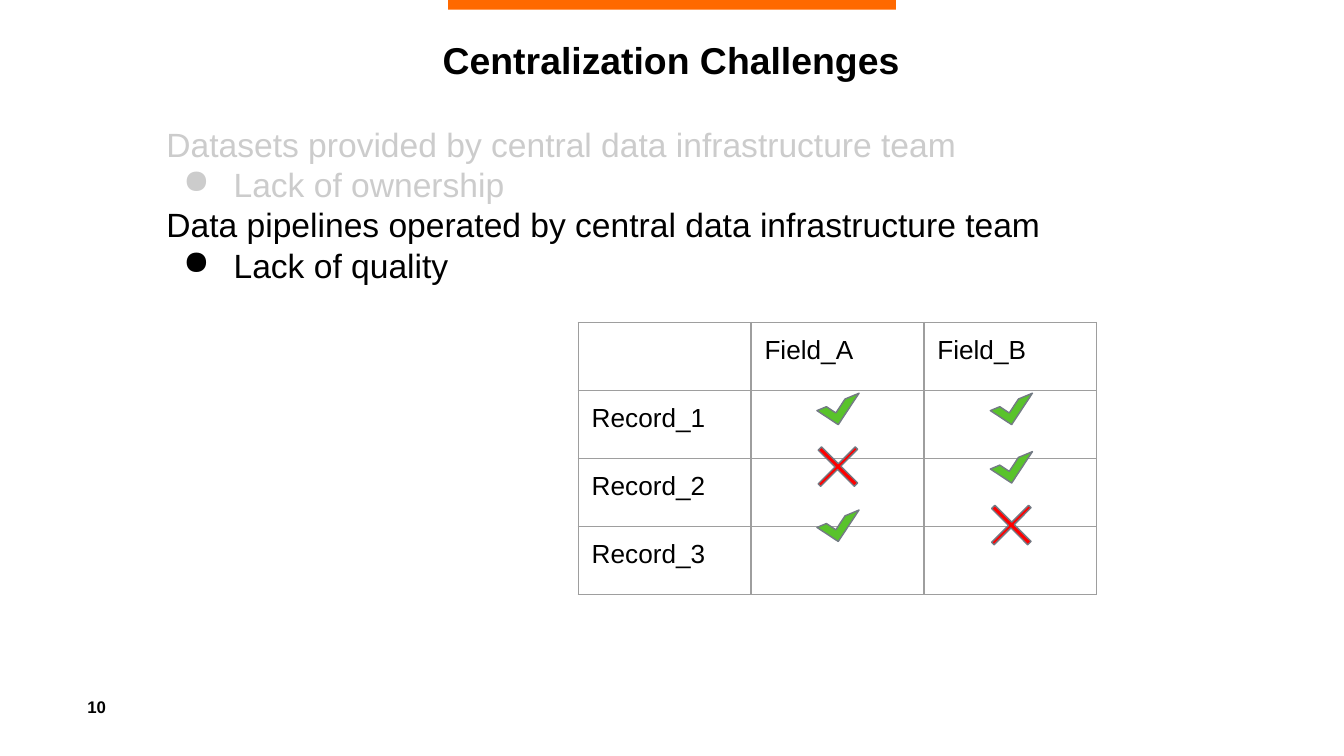
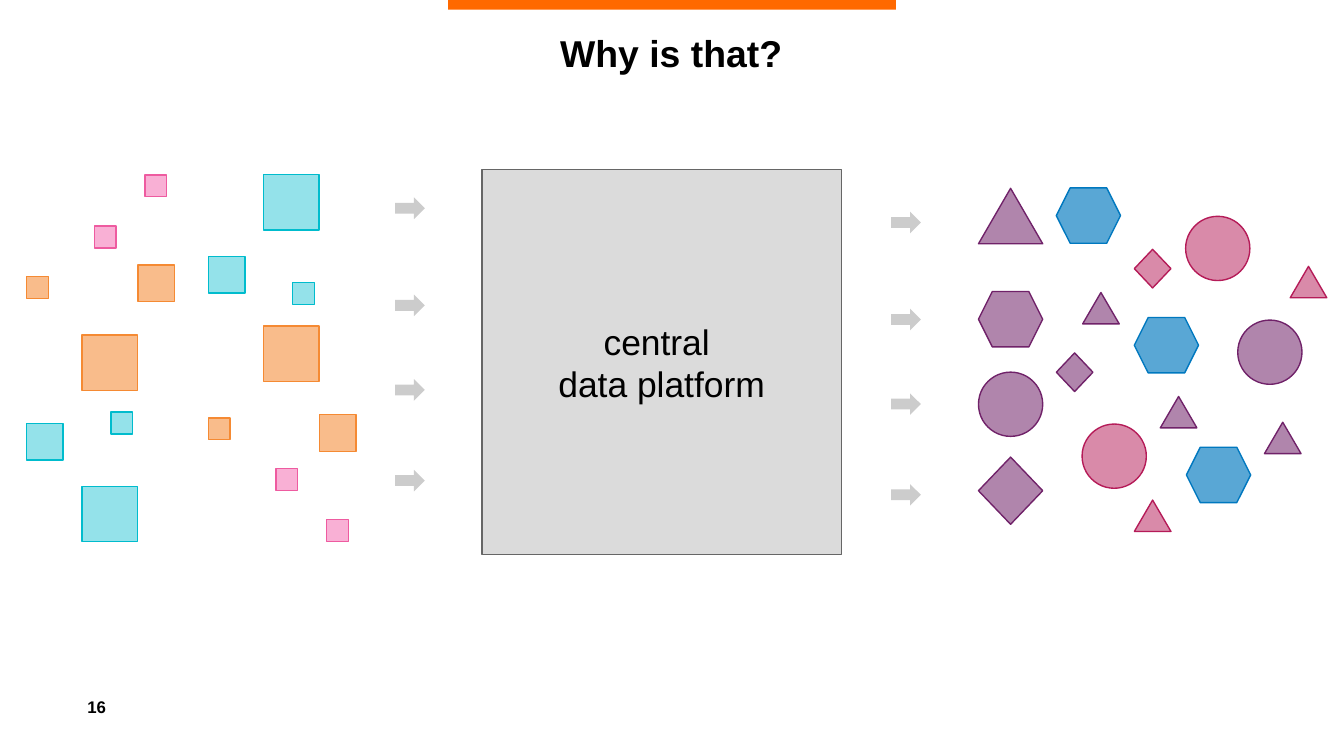
from lxml import etree
from pptx import Presentation
from pptx.dml.color import RGBColor
from pptx.enum import shapes, text
from pptx.oxml import ns
from pptx.util import Pt

BLACK, FADED, GRID, OUTLINE = "000000", "CCCCCC", "9E9E9E", "737A84"
ACCENT, GREEN, RED = "FF6900", "59C32B", "FF0000"
KIND = shapes.MSO_SHAPE
CENTER, MIDDLE = text.PP_ALIGN.CENTER, text.MSO_ANCHOR.MIDDLE

# fill, opacity in percent, outline
TEAL = ("00BCCD", 42, "00BCCD")
ORANGE = ("F58A33", 57, "F58A33")
PINK = ("F02B8F", 37, "EE5BA0")
PURPLE = ("702269", 55, "702269")
BLUE = ("0078BF", 65, "0078BF")
ROSE = ("B51B58", 51, "B51B58")


def rgb(value):
    return RGBColor.from_string(value)


def sub(parent, tag, **attrs):
    """Append an a: element with the given attributes."""
    el = etree.SubElement(parent, ns.qn("a:" + tag))
    for key, value in attrs.items():
        el.set(key, str(value))
    return el


def write(p, words, size=18, color=BLACK, bold=False, align=None, spacing=None, bullet=False):
    """Put formatted text in a paragraph; a vertical tab breaks the line."""
    if bullet:
        pPr = p._p.get_or_add_pPr()
        pPr.set("marL", str(Pt(36)))
        pPr.set("indent", str(Pt(-27)))
        sub(sub(pPr, "buClr"), "srgbClr", val=color)
        sub(pPr, "buChar", char="●")
    p.text = words
    if align is not None:
        p.alignment = align
    if spacing is not None:
        p.line_spacing = spacing
    for r in p.runs:
        r.font.name, r.font.size, r.font.bold = "Arial", Pt(size), bold
        r.font.color.rgb = rgb(color)


class Deck:
    def __init__(self):
        self.prs = Presentation()
        self.prs.slide_width, self.prs.slide_height = Pt(720), Pt(405)
        self.s = None

    def slide(self, title, number, spacing):
        self.s = self.prs.slides.add_slide(self.prs.slide_layouts[5])
        self.shape(KIND.RECTANGLE, 240, 0, 240, 5.2, ACCENT)
        tf = self.text_box(46.8, 373, 26.6, 10.8, inset=0)
        tf.vertical_anchor = MIDDLE
        write(tf.paragraphs[0], number, size=9, bold=True)
        sp = self.s.shapes.title
        sp.left, sp.top, sp.width, sp.height = Pt(46.1), Pt(0), Pt(627.1), Pt(59)
        self.frame(sp.text_frame, 2.9).vertical_anchor = MIDDLE
        write(sp.text_frame.paragraphs[0], title, size=20, bold=True, align=CENTER, spacing=spacing)

    def frame(self, tf, inset):
        tf.word_wrap, tf.auto_size = True, text.MSO_AUTO_SIZE.NONE
        tf.margin_left = tf.margin_right = tf.margin_top = tf.margin_bottom = Pt(inset)
        return tf

    def text_box(self, x, y, w, h, inset=7.2):
        sp = self.s.shapes.add_textbox(Pt(x), Pt(y), Pt(w), Pt(h))
        return self.frame(sp.text_frame, inset)

    def shape(self, kind, x, y, w, h, fill, opacity=100, line=None, rotation=0, adjust=()):
        sp = self.s.shapes.add_shape(kind, Pt(x), Pt(y), Pt(w), Pt(h))
        sp.shadow.inherit = False
        sp.rotation = rotation
        for i, value in enumerate(adjust):
            sp.adjustments[i] = value
        sp.fill.solid()
        sp.fill.fore_color.rgb = rgb(fill)
        if opacity < 100:
            clr = sp._element.spPr.find(ns.qn("a:solidFill"))[0]
            sub(clr, "alpha", val=opacity * 1000)
        if line:
            sp.line.color.rgb = rgb(line)
            sp.line.width = Pt(0.75)
        else:
            sp.line.fill.background()
        return sp

    def mark(self, good, cx, cy):
        """Draw a check or a cross around a centre."""
        if good:
            kind, w, h, fill, rotation, adjust = KIND.HALF_FRAME, 13.7, 20.2, GREEN, 213.4, (0.333, 0.333)
        else:
            kind, w, h, fill, rotation, adjust = KIND.CROSS, 27.4, 28.1, RED, 45, (0.466,)
            cy += 3.4
        self.shape(kind, cx - w / 2, cy - h / 2, w, h, fill, line=OUTLINE,
                   rotation=rotation, adjust=adjust)

    def table(self, rows, x, y, col_width, row_height):
        n, m = len(rows), len(rows[0])
        table = self.s.shapes.add_table(n, m, Pt(x), Pt(y), Pt(col_width * m), Pt(row_height * n)).table
        table.first_row = table.horz_banding = False
        for col in table.columns:
            col.width = Pt(col_width)
        for i, row in enumerate(rows):
            for j, words in enumerate(row):
                self.cell(table.cell(i, j), words)

    def cell(self, cell, words):
        cell.margin_left = cell.margin_right = cell.margin_top = cell.margin_bottom = Pt(7.2)
        if words:
            write(cell.text_frame.paragraphs[0], words, size=14)
        tcPr = cell._tc.get_or_add_tcPr()
        for side in ("lnL", "lnR", "lnT", "lnB"):
            ln = sub(tcPr, side, w=Pt(0.75))
            sub(sub(ln, "solidFill"), "srgbClr", val=GRID)
        cell.fill.background()

    def arrows(self, x, tops):
        for y in tops:
            self.shape(KIND.RIGHT_ARROW, x, y, 15.9, 11.6, FADED)


def challenges(deck):
    deck.slide("Centralization Challenges", "10", 1.2)
    deck.table([["", "Field_A", "Field_B"],
                ["Record_1", "", ""],
                ["Record_2", "", ""],
                ["Record_3", "", ""]], 309.8, 172.8, 92.6, 30.4)
    tf = deck.text_box(82.1, 59, 525.6, 217.4)
    lines = [("Datasets provided by central data infrastructure team", FADED, False),
             ("Lack of ownership", FADED, True),
             ("Data pipelines operated by central data infrastructure team", BLACK, False),
             ("Lack of quality", BLACK, True)]
    for i, (words, color, bullet) in enumerate(lines):
        p = tf.add_paragraph() if i else tf.paragraphs[0]
        write(p, words, color=color, bullet=bullet)
    for i, row in enumerate([(True, True), (False, True), (True, False)]):
        for j, good in enumerate(row):
            deck.mark(good, 448.9 + 92.9 * j, 215.3 + 31.3 * i)


def platform(deck):
    deck.slide("Why is that?", "16", 0.9)
    sp = deck.shape(KIND.RECTANGLE, 258.2, 90.9, 192.5, 206.3, "5E5E5E", 22, "666666")
    tf = deck.frame(sp.text_frame, 7.2)
    tf.vertical_anchor = MIDDLE
    write(tf.paragraphs[0], "central \vdata platform", size=19, align=CENTER)

    # Each source square has a twin, shifted left and flipped top to bottom
    large, medium, small = 29.7, 19.6, 11.7
    sources = [(TEAL, large, 141.3, 93.5), (ORANGE, large, 141.3, 174.6),
               (ORANGE, medium, 171.2, 222.2), (TEAL, medium, 111.6, 137.4),
               (ORANGE, small, 111.6, 223.9), (PINK, small, 147.8, 251),
               (PINK, small, 174.9, 278.4), (TEAL, small, 156.7, 151.3)]
    for style, side, x, y in sources:
        deck.shape(KIND.RECTANGLE, x, y, side, side, *style)
        deck.shape(KIND.RECTANGLE, x - 97.3, 383.8 - y - side, side, side, *style)

    tops = [105.8, 157.8, 203.1, 251.7]
    deck.arrows(211.7, tops)
    deck.arrows(477.4, [y + 7.6 for y in tops])

    triangle = (KIND.ISOSCELES_TRIANGLE, 34.4, 29.7)
    hexagon = (KIND.HEXAGON, 34.4, 29.7)
    circle = (KIND.OVAL, 34.4, 34.4)
    diamond = (KIND.DIAMOND, 34.4, 36)
    small_triangle = (KIND.ISOSCELES_TRIANGLE, 19.6, 16.8)
    small_diamond = (KIND.DIAMOND, 19.6, 20.7)
    products = [(triangle, PURPLE, 524.2, 100.9), (hexagon, PURPLE, 524.2, 156.2),
                (circle, PURPLE, 524.2, 199.4), (diamond, PURPLE, 524.2, 244.9),
                (hexagon, BLUE, 565.9, 100.7), (hexagon, BLUE, 607.7, 170.1),
                (hexagon, BLUE, 635.6, 239.6), (circle, ROSE, 635.2, 115.9),
                (circle, PURPLE, 663.1, 171.5), (circle, ROSE, 579.7, 227.2),
                (small_diamond, PURPLE, 565.9, 189.1), (small_diamond, ROSE, 607.7, 133.6),
                (small_triangle, PURPLE, 580, 156.7), (small_triangle, PURPLE, 621.6, 212.4),
                (small_triangle, ROSE, 607.7, 267.9), (small_triangle, PURPLE, 677.4, 226.2),
                (small_triangle, ROSE, 691.2, 142.7)]
    for (kind, w, h), style, x, y in products:
        deck.shape(kind, x, y, w, h, *style)


def main():
    deck = Deck()
    challenges(deck)
    platform(deck)
    deck.prs.save("out.pptx")


if __name__ == "__main__":
    main()
